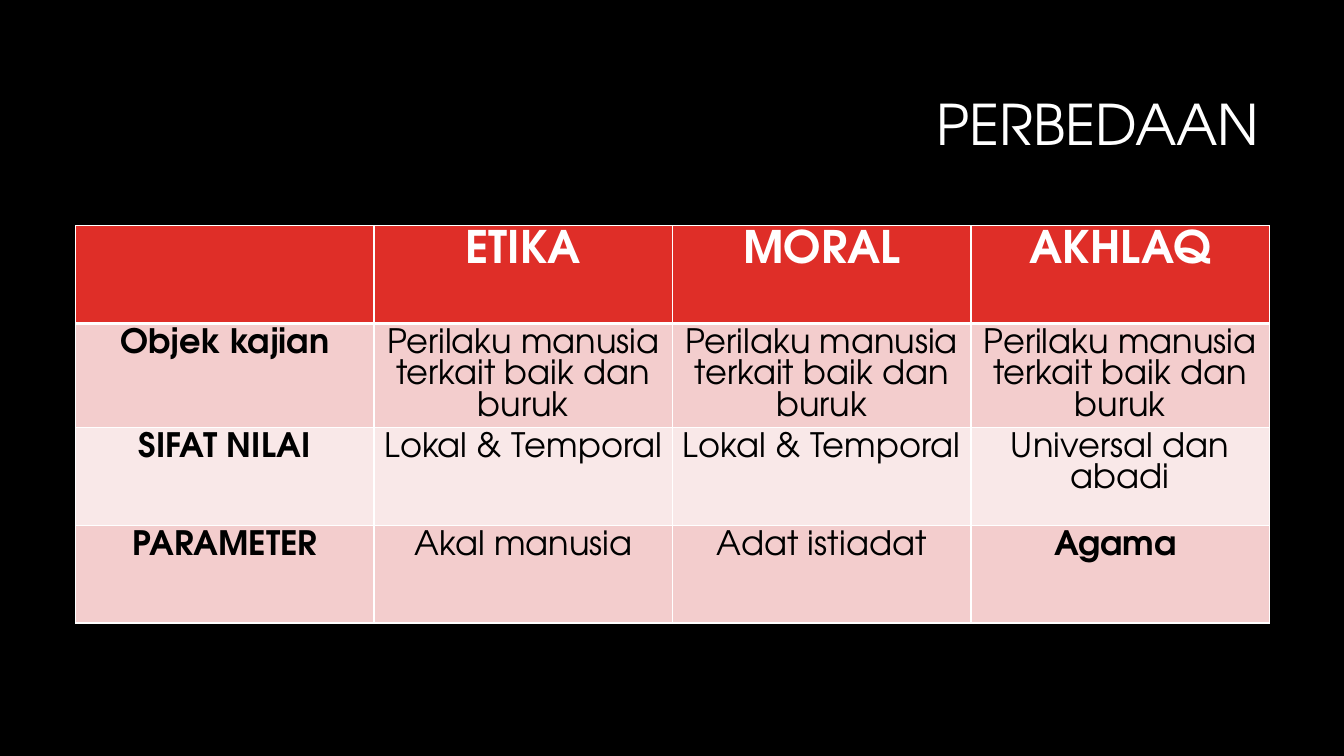
from lxml.etree import SubElement
from pptx import Presentation
from pptx.dml.color import RGBColor
from pptx.enum.text import MSO_ANCHOR as Anchor, PP_ALIGN as Align
from pptx.oxml import parse_xml
from pptx.oxml.ns import nsdecls, qn
from pptx.util import Inches, Pt

FONT = "TeX Gyre Adventor"
WHITE, BLACK = "FFFFFF", "000000"
RED, PINK, PALE = "DF2E28", "F3CDCD", "F9E8E8"

TITLE = "PERBEDAAN"
OBJECT = "Perilaku manusia terkait baik dan buruk"
ROWS = [
    ("", "ETIKA", "MORAL", "AKHLAQ"),
    ("Objek kajian", OBJECT, OBJECT, OBJECT),
    ("SIFAT NILAI", "Lokal & Temporal", "Lokal & Temporal", "Universal dan abadi"),
    ("PARAMETER", "Akal manusia", "Adat istiadat", "Agama "),
]
FILLS = [RED, PINK, PALE, PINK]
LEFT, TOP, COL, ROW = 0.75, 2.24, 2.96, 0.97


def rgb(color):
    return RGBColor.from_string(color)


def write(frame, text, size, color, bold=False, align=Align.CENTER, spacing=None):
    para = frame.paragraphs[0]
    para.alignment = align
    para.line_spacing = spacing
    if not text:
        return
    run = para.add_run()
    run.text = text
    font = run.font
    font.name, font.size, font.bold = FONT, Pt(size), bold
    font.color.rgb = rgb(color)


def border(cell, top, bottom):
    """Draw white lines round a cell; top and bottom are widths in points."""
    props = cell._tc.get_or_add_tcPr()
    for i, (side, width) in enumerate([("L", 1), ("R", 1), ("T", top), ("B", bottom)]):
        line = parse_xml(f'<a:ln{side} {nsdecls("a")} w="{Pt(width)}"/>')
        fill = SubElement(line, qn("a:solidFill"))
        SubElement(fill, qn("a:srgbClr"), val=WHITE)
        props.insert(i, line)


def main():
    deck = Presentation()
    deck.slide_width, deck.slide_height = Inches(13.33), Inches(7.5)
    slide = deck.slides.add_slide(deck.slide_layouts[5])
    back = slide.background.fill
    back.solid()
    back.fore_color.rgb = rgb(BLACK)

    title = slide.shapes.title
    title.left, title.top = Inches(3.17), Inches(0.84)
    title.width, title.height = Inches(9.42), Inches(0.84)
    title.text_frame.vertical_anchor = Anchor.MIDDLE
    write(title.text_frame, TITLE, 40, WHITE, align=Align.RIGHT, spacing=0.9)

    rows, cols = len(ROWS), len(ROWS[0])
    table = slide.shapes.add_table(
        rows, cols, Inches(LEFT), Inches(TOP), Inches(COL * cols), Inches(ROW * rows)
    ).table
    for r, (texts, fill) in enumerate(zip(ROWS, FILLS)):
        head = r == 0
        for c, text in enumerate(texts):
            cell = table.cell(r, c)
            cell.fill.solid()
            cell.fill.fore_color.rgb = rgb(fill)
            border(cell, top=3 if r == 1 else 1, bottom=3 if head else 1)
            last = (r, c) == (rows - 1, cols - 1)
            write(cell.text_frame, text, 32 if head else 24,
                  WHITE if head else BLACK, bold=head or c == 0 or last)

    deck.save("out.pptx")


if __name__ == "__main__":
    main()
